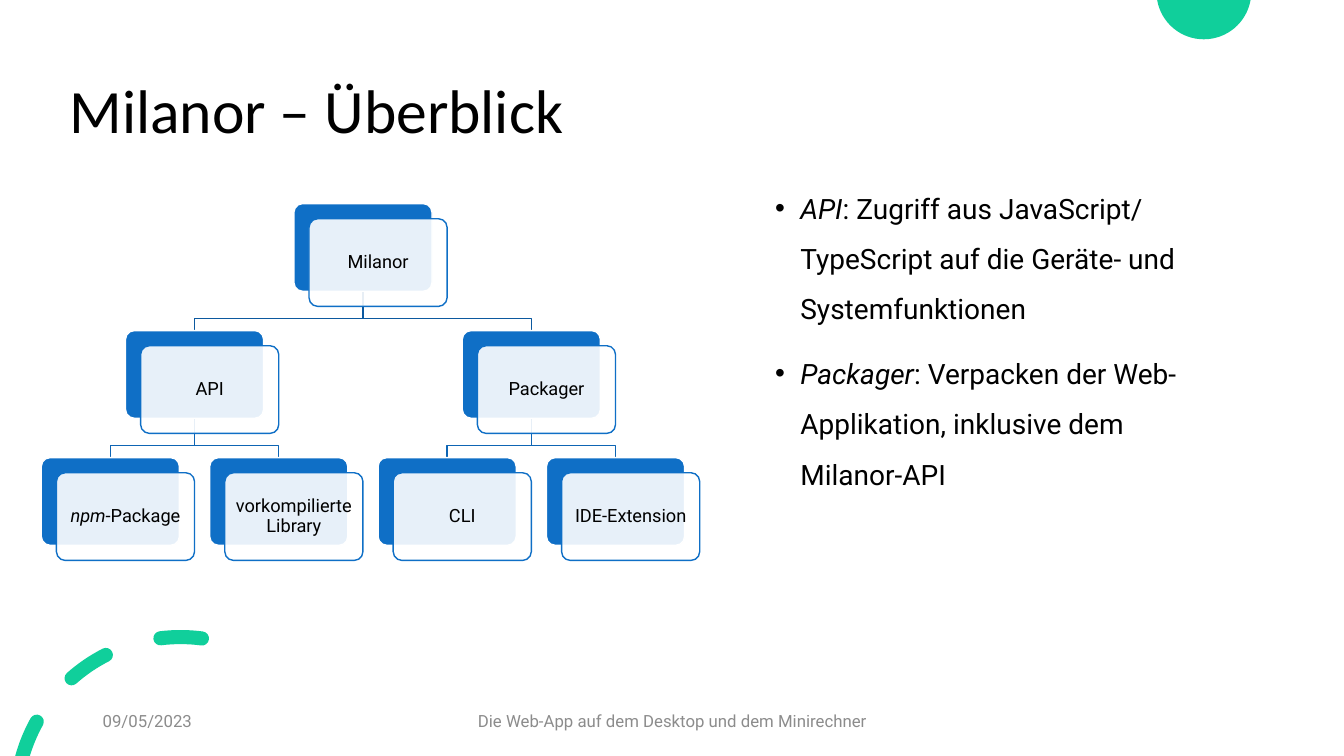
from collections import namedtuple
from dataclasses import dataclass
from math import asin, cos, degrees, radians, sin, tan

from lxml import etree
from pptx import Presentation
from pptx.dml.color import RGBColor
from pptx.enum.shapes import MSO_SHAPE as Shape
from pptx.enum.text import MSO_ANCHOR as Anchor, PP_ALIGN as Align
from pptx.oxml.ns import qn
from pptx.util import Inches, Pt


@dataclass(frozen=True)
class Theme:
    black: str = "000000"
    white: str = "FFFFFF"
    gray: str = "8C8C8C"
    green: str = "10CF9B"
    blue: str = "0F6FC6"
    upper_link: str = "0C599F"
    lower_link: str = "0E65B4"
    heading_font: str = "Calibri"
    body_font: str = "Roboto"
    bullet_font: str = "Arial"
    title_size: int = 44
    body_size: int = 20
    card_size: int = 13
    footer_size: int = 12


THEME = Theme()
Box = namedtuple("Box", "left top width height")
Node = namedtuple("Node", "label children", defaults=[()])

SLIDE = Box(0, 0, 13.33, 7.5)
CARD_WIDTH, CARD_HEIGHT = 1.37, 0.87
CARD_OFFSET = 0.15
COLUMN_STEP, LEVEL_STEP = 1.67, 1.26
LINK_BEND = 0.27

TREE = Node("Milanor", (
    Node("API", (Node("*npm*-Package"), Node("vorkompilierte Library"))),
    Node("Packager", (Node("CLI"), Node("IDE-Extension"))),
))
POINTS = [
    "*API*: Zugriff aus JavaScript/ TypeScript auf die Geräte- und Systemfunktionen",
    "*Packager*: Verpacken der Web-Applikation, inklusive dem Milanor-API",
]


def color(value):
    return RGBColor.from_string(value)


def write(shape, paragraphs, *, size, font=THEME.body_font, ink=THEME.black,
          align=Align.LEFT, anchor=Anchor.MIDDLE, spacing=1.0, gap=0,
          inset=None, bullet=False):
    frame = shape.text_frame
    frame.word_wrap = True
    frame.vertical_anchor = anchor
    if inset is not None:
        frame.margin_left = frame.margin_right = Inches(inset)
        frame.margin_top = frame.margin_bottom = Inches(inset)
    for index, text in enumerate(paragraphs):
        paragraph = frame.add_paragraph() if index else frame.paragraphs[0]
        paragraph.alignment = align
        paragraph.line_spacing = spacing
        if index:
            paragraph.space_before = Pt(gap)
        if bullet:
            properties = paragraph._p.get_or_add_pPr()
            properties.set("marL", str(Inches(0.25)))
            properties.set("indent", str(Inches(-0.25)))
            etree.SubElement(properties, qn("a:buFont")).set("typeface", THEME.bullet_font)
            etree.SubElement(properties, qn("a:buChar")).set("char", "•")
        for position, piece in enumerate(text.split("*")):
            if piece:
                run = paragraph.add_run()
                run.text = piece
                run.font.name = font
                run.font.size = Pt(size)
                run.font.italic = position % 2 == 1
                run.font.color.rgb = color(ink)


def add_text(slide, box, paragraphs, **style):
    shape = slide.shapes.add_textbox(*map(Inches, box))
    write(shape, paragraphs, **style)


def add_outline(slide, contours, *, fill=None, line=None):
    scaled = [[(Inches(x), Inches(y)) for x, y in contour] for contour in contours]
    builder = slide.shapes.build_freeform(*scaled[0][0])
    for index, corners in enumerate(scaled):
        if index:
            builder.move_to(*corners[0])
        builder.add_line_segments(corners[1:], close=fill is not None)
    shape = builder.convert_to_shape()
    shape.shadow.inherit = False
    if fill:
        shape.fill.solid()
        shape.fill.fore_color.rgb = color(fill)
    else:
        shape.fill.background()
    if line:
        shape.line.color.rgb = color(line)
        shape.line.width = Pt(1)
    else:
        shape.line.fill.background()
    return shape


def add_curves(slide, contours, fill):
    shape = add_outline(slide, contours, fill=fill)
    segments = list(shape._element.iter(qn("a:lnTo")))
    for first, second, third in zip(segments[::3], segments[1::3], segments[2::3]):
        first.tag = qn("a:cubicBezTo")
        for segment in (second, third):
            first.append(segment[0])
            segment.getparent().remove(segment)


def polar(center, radius, angle):
    return (center[0] + radius * cos(radians(angle)), center[1] + radius * sin(radians(angle)))


def arc(center, radius, start, end, pieces=1):
    sweep = (end - start) / pieces
    handle = 4 / 3 * tan(radians(sweep) / 4) * radius
    points = []
    for piece in range(pieces):
        first, last = start + piece * sweep, start + (piece + 1) * sweep
        target = polar(center, radius, last)
        points += [polar(polar(center, radius, first), handle, first + 90),
                   polar(target, -handle, last + 90), target]
    return points


def ring_dash(center, radius, half_width, start, end, floor):
    outer, inner = radius + half_width, radius - half_width
    outer_start = inner_start = start
    if start is None:
        drop = center[1] - floor
        outer_start = 180 + degrees(asin(drop / outer))
        inner_start = 180 + degrees(asin(drop / inner))
    contour = [polar(center, outer, outer_start), *arc(center, outer, outer_start, end)]
    contour += arc(polar(center, radius, end), half_width, end, end + 180, 2)
    contour += arc(center, inner, end, inner_start)
    if start is not None:
        contour += arc(polar(center, radius, start), half_width, start + 180, start + 360, 2)
    return contour


def add_decoration(slide, box):
    bottom = box.top + box.height
    disc_center, disc_radius = (box.left + 11.94, box.top - 0.08), 0.47
    edge = degrees(asin(0.08 / disc_radius))
    disc = [polar(disc_center, disc_radius, edge),
            *arc(disc_center, disc_radius, edge, 180 - edge, 2)]
    ring_center = (box.left + 1.79, bottom + 0.45)
    dashes = [ring_dash(ring_center, 1.63, 0.07, start, end, bottom)
              for start, end in ((None, 209), (228.5, 243), (263, 277.5))]
    add_curves(slide, [disc], THEME.green)
    add_curves(slide, dashes, THEME.green)


def add_card(slide, box, label):
    for offset, edge in ((0, THEME.white), (CARD_OFFSET, THEME.blue)):
        card = slide.shapes.add_shape(
            Shape.ROUNDED_RECTANGLE, Inches(box.left + offset), Inches(box.top + offset),
            Inches(box.width), Inches(box.height))
        card.adjustments[0] = 0.1
        card.shadow.inherit = False
        card.fill.solid()
        card.fill.fore_color.rgb = color(THEME.white if offset else THEME.blue)
        card.line.color.rgb = color(edge)
        card.line.width = Pt(1)
    tint = card.fill._xPr.find(qn("a:solidFill"))[0]
    etree.SubElement(tint, qn("a:alpha")).set("val", "90000")
    write(card, [label], size=THEME.card_size, align=Align.CENTER, spacing=0.9, inset=0.05)


def leaf_count(node):
    return sum(map(leaf_count, node.children)) or 1


def place_tree(node, left, top, level=0):
    cards, links, child_boxes = [], [], []
    child_left = left
    for child in node.children:
        child_cards, child_links = place_tree(child, child_left, top + LEVEL_STEP, level + 1)
        child_boxes.append(child_cards[0][0])
        cards += child_cards
        links += child_links
        child_left += leaf_count(child) * COLUMN_STEP
    if child_boxes:
        left = (child_boxes[0].left + child_boxes[-1].left) / 2
    box = Box(left, top, CARD_WIDTH, CARD_HEIGHT)
    links += [(box, child_box, level) for child_box in child_boxes]
    return [(box, node.label), *cards], links


def add_tree(slide, box):
    cards, links = place_tree(TREE, box.left, box.top)
    for parent, child, level in links:
        start = parent.left + parent.width / 2
        end = child.left + child.width / 2
        base = parent.top + parent.height
        bend = base + LINK_BEND
        add_outline(slide, [[(start, base), (start, bend), (end, bend), (end, child.top)]],
                    line=THEME.lower_link if level else THEME.upper_link)
    for card_box, label in cards:
        add_card(slide, card_box, label)


def add_footer(slide, box):
    style = dict(size=THEME.footer_size, ink=THEME.gray)
    add_text(slide, Box(box.left, box.top, 3, box.height), ["09/05/2023"], **style)
    add_text(slide, Box(box.left + 3.5, box.top, 4.5, box.height),
             ["Die Web-App auf dem Desktop und dem Minirechner"], align=Align.CENTER, **style)


def add_overview(presentation):
    slide = presentation.slides.add_slide(presentation.slide_layouts[6])
    add_decoration(slide, SLIDE)
    add_text(slide, Box(0.59, 0.4, 11.5, 1.45), ["Milanor – Überblick"],
             size=THEME.title_size, font=THEME.heading_font, spacing=0.9)
    add_footer(slide, Box(0.92, 6.95, 8, 0.4))
    add_tree(slide, Box(0.41, 2.02, 6.53, 3.54))
    add_text(slide, Box(7.59, 1.68, 4.5, 4.22), POINTS, size=THEME.body_size,
             anchor=Anchor.TOP, spacing=1.5, gap=10, bullet=True)


def main():
    presentation = Presentation()
    presentation.slide_width = Inches(SLIDE.width)
    presentation.slide_height = Inches(SLIDE.height)
    add_overview(presentation)
    presentation.save("out.pptx")


if __name__ == "__main__":
    main()
